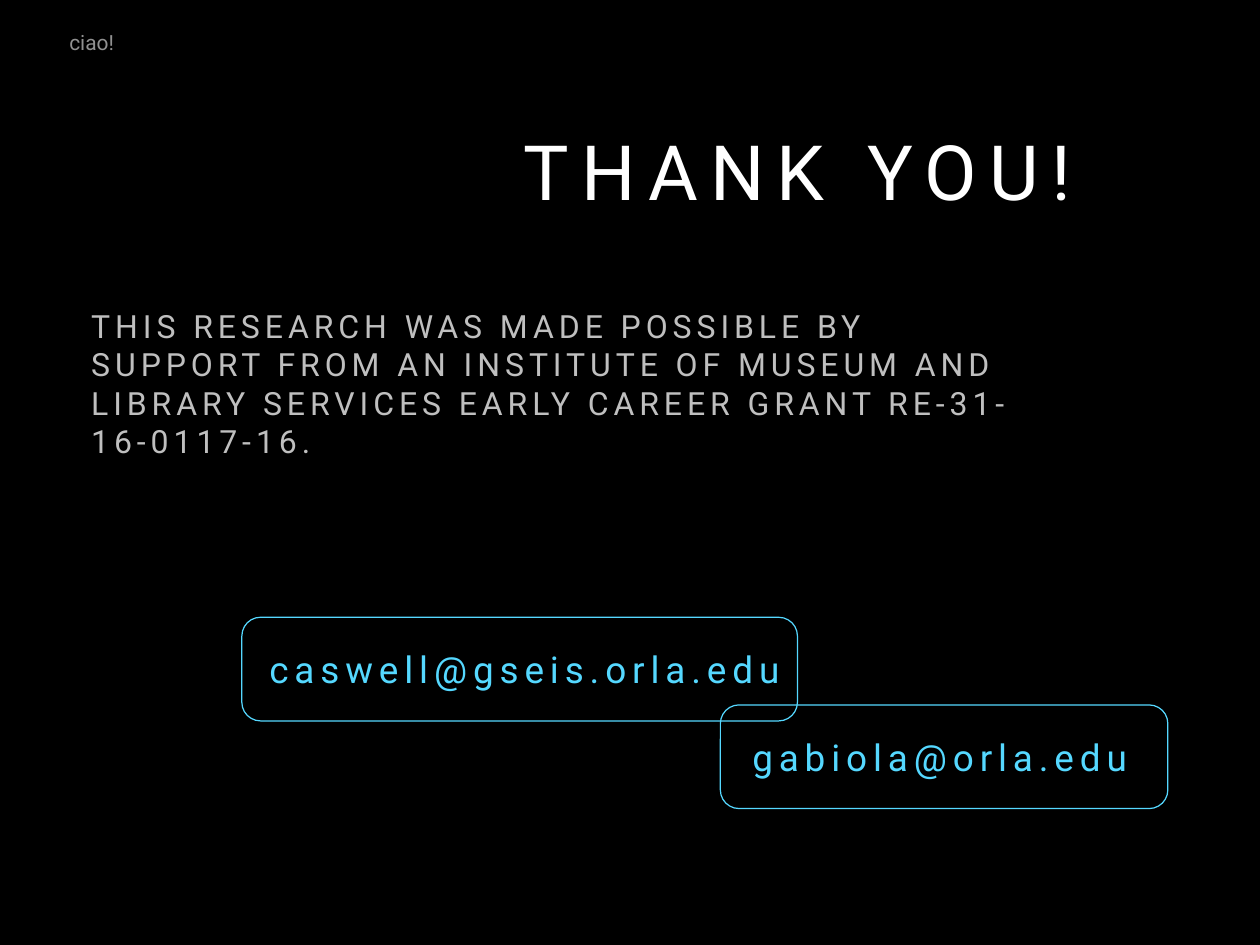
from dataclasses import dataclass

from pptx import Presentation
from pptx.dml.color import RGBColor as RGB
from pptx.enum.shapes import MSO_SHAPE as SHAPE
from pptx.enum.text import MSO_ANCHOR as ANCHOR, PP_ALIGN as ALIGN
from pptx.util import Inches, Pt


@dataclass(frozen=True)
class Theme:
    """Colours, font and type sizes of the slide."""
    font: str = "Roboto"
    background: str = "000000"
    title: str = "FFFFFF"
    body: str = "BFBFBF"
    label: str = "919191"
    accent: str = "55D8FF"
    title_size: float = 62
    email_size: float = 30
    body_size: float = 26
    label_size: float = 17


THEME = Theme()


def place(sp, box):
    """Move a shape to a box of left, top, width and height in inches."""
    sp.left, sp.top, sp.width, sp.height = (Inches(v) for v in box)


def write(sp, text, *, size, color, spacing=0, align=ALIGN.LEFT, wrap=True):
    """Fill a shape with one formatted paragraph."""
    tf = sp.text_frame
    tf.word_wrap = wrap
    tf.vertical_anchor = ANCHOR.MIDDLE
    tf.margin_left = tf.margin_right = Inches(0.06)
    tf.margin_top = tf.margin_bottom = Inches(0.06)
    p = tf.paragraphs[0]
    p.alignment = align
    r = p.add_run()
    r.text = text
    r.font.name = THEME.font
    r.font.size = Pt(size)
    r.font.color.rgb = RGB.from_string(color)
    if spacing:
        r._r.get_or_add_rPr().set("spc", str(round(spacing * 100)))


def add_text(s, box, text, **fmt):
    """Add a text box with formatted text."""
    sp = s.shapes.add_textbox(*(Inches(v) for v in box))
    write(sp, text, **fmt)


def add_title(s, box, text):
    """Place and format the title placeholder."""
    place(s.shapes.title, box)
    write(s.shapes.title, text, size=THEME.title_size, color=THEME.title,
          spacing=9.9)


def add_email(s, box, text, indent):
    """Add a rounded outline with an e-mail address centred vertically in it."""
    left, top, width, height = box
    sp = s.shapes.add_shape(SHAPE.ROUNDED_RECTANGLE, *(Inches(v) for v in box))
    sp.adjustments[0] = 0.18
    sp.shadow.inherit = False
    sp.fill.background()
    sp.line.color.rgb = RGB.from_string(THEME.accent)
    sp.line.width = Pt(1)
    text_height = 0.68
    add_text(s, (left + indent, top + (height - text_height) / 2,
                 width - indent + 0.03, text_height), text,
             size=THEME.email_size, color=THEME.accent, spacing=4.8)


def build_closing(prs):
    """Add the closing slide with thanks, funding note and contacts."""
    s = prs.slides.add_slide(prs.slide_layouts[5])
    s.background.fill.solid()
    s.background.fill.fore_color.rgb = RGB.from_string(THEME.background)
    add_text(s, (0.97, 3.27, 10.54, 2.11),
             "THIS RESEARCH WAS MADE POSSIBLE BY SUPPORT FROM AN INSTITUTE OF "
             "MUSEUM AND LIBRARY SERVICES EARLY CAREER GRANT RE-31-16-0117-16.",
             size=THEME.body_size, color=THEME.body, spacing=4)
    add_title(s, (5.85, 1.28, 6.84, 1.29), "THANK YOU!")
    add_text(s, (0.71, 0.26, 0.65, 0.43), "ciao!", size=THEME.label_size,
             color=THEME.label, align=ALIGN.CENTER, wrap=False)
    add_email(s, (2.73, 6.97, 6.27, 1.17), "caswell@gseis.orla.edu", 0.25)
    add_email(s, (8.13, 7.96, 5.05, 1.17), "gabiola@orla.edu", 0.3)


def main():
    """Build and save the presentation."""
    prs = Presentation()
    prs.slide_width, prs.slide_height = Inches(14.22), Inches(10.67)
    build_closing(prs)
    prs.save("out.pptx")


if __name__ == "__main__":
    main()
